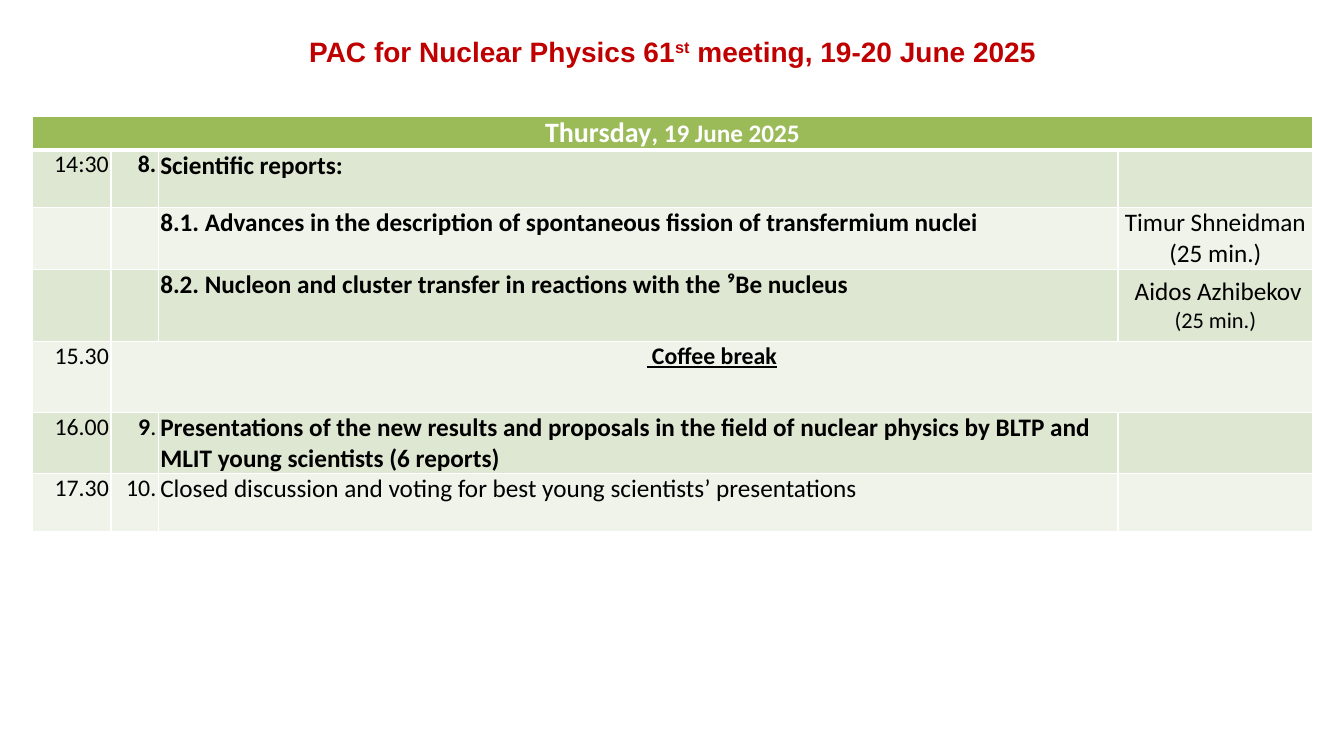
"""Build the agenda slide of the nuclear physics committee meeting."""
from dataclasses import dataclass

from lxml import etree
from pptx import Presentation
from pptx.dml.color import RGBColor
from pptx.enum.text import MSO_ANCHOR, PP_ALIGN
from pptx.oxml.ns import qn
from pptx.util import Inches, Pt

LEFT, CENTER, RIGHT = PP_ALIGN.LEFT, PP_ALIGN.CENTER, PP_ALIGN.RIGHT
TOP, MIDDLE = MSO_ANCHOR.TOP, MSO_ANCHOR.MIDDLE


@dataclass(frozen=True)
class Theme:
    red: str = "C00000"
    white: str = "FFFFFF"
    black: str = "000000"
    header: str = "9BBB59"
    bands: tuple = ("EFF3EA", "DEE7D1")
    title_font: str = "Arial"
    table_font: str = "Calibri"
    large: int = 20
    body: int = 18
    label: int = 17
    small: int = 16


THEME = Theme()
BOLD = {"bold": True}
LABEL = {"size": THEME.label}
BOLD_LABEL = LABEL | BOLD
UNDERLINED = BOLD_LABEL | {"underline": True}
BREAK = ("\n", {})

TITLE = [
    ("PAC for Nuclear Physics 61", {}),
    ("st", {"baseline": 30000}),
    (" meeting, 19-20 June 2025", {}),
]
HEADER = [("Thursday", {"size": THEME.large}), (", 19 June 2025", {})]
AGENDA = [
    [HEADER, [], [], []],
    [[("14:30", LABEL)], [("8.", BOLD_LABEL)], [("Scientific reports:", BOLD)], []],
    [[], [],
     [("8.1. Advances in the description of spontaneous fission of transfermium nuclei", BOLD)],
     [("Timur Shneidman", {}), BREAK, ("(25 min.)", {})]],
    [[], [],
     [("8.2. Nucleon and cluster transfer in reactions with the ⁹Be nucleus", BOLD)],
     [(" Aidos Azhibekov", {}), BREAK, ("(25 min.)", {"size": THEME.small})]],
    [[("15.30", LABEL)], [(" Coffee break", UNDERLINED)], [], []],
    [[("16.00", LABEL)], [("9", BOLD_LABEL), (".", LABEL)],
     [("Presentations of the new results and proposals in the field of nuclear physics "
       "by BLTP and MLIT young scientists (6 reports)", BOLD)], []],
    [[("17.30", LABEL)], [("10.", LABEL)],
     [("Closed discussion and voting for best young scientists’ presentations", {})], []],
]
MERGES = {(0, 0): (0, 3), (4, 1): (4, 3)}
COLUMN_WIDTHS = (0.78, 0.47, 9.52, 1.93)
ROW_HEIGHTS = (0.34, 0.57, 0.6, 0.72, 0.7, 0.6, 0.57)
COLUMN_ALIGNMENTS = (RIGHT, RIGHT, LEFT, CENTER)
FRAME_LEFT, FRAME_WIDTH = 0.32, sum(COLUMN_WIDTHS)


def write_runs(para, runs, base):
    """Write formatted runs and line breaks into a paragraph."""
    for text, changes in runs:
        if text == "\n":
            para.add_line_break()
            continue
        span = para.add_run()
        span.text = text
        formats = base | changes
        span.font.size = Pt(formats.pop("size"))
        span.font.color.rgb = RGBColor.from_string(formats.pop("color"))
        baseline = formats.pop("baseline", None)
        if baseline:
            span.font._element.set("baseline", str(baseline))
        for name, value in formats.items():
            setattr(span.font, name, value)


def add_borders(cell, bottom_width):
    """Draw white rules on the four sides of a cell."""
    properties = cell._tc.get_or_add_tcPr()
    for side, width in (("L", 1), ("R", 1), ("T", 1), ("B", bottom_width)):
        line = etree.SubElement(properties, qn(f"a:ln{side}"), w=str(Pt(width)))
        fill = etree.SubElement(line, qn("a:solidFill"))
        etree.SubElement(fill, qn("a:srgbClr"), val=THEME.white)


def add_title(page):
    """Place and write the slide title."""
    box = page.shapes.title
    box.left, box.top = Inches(FRAME_LEFT), Inches(0.29)
    box.width, box.height = Inches(FRAME_WIDTH), Inches(0.44)
    frame = box.text_frame
    frame.word_wrap, frame.vertical_anchor = True, TOP
    para = frame.paragraphs[0]
    para.alignment, para.line_spacing = CENTER, 1.0
    write_runs(para, TITLE, {"size": THEME.large, "name": THEME.title_font,
                             "color": THEME.red, "bold": True})


def format_cell(cell, row, column, runs):
    """Fill one agenda cell and write its text."""
    is_header = row == 0
    add_borders(cell, 3 if is_header else 1)
    fill = THEME.header if is_header else THEME.bands[row % 2]
    cell.fill.solid()
    cell.fill.fore_color.rgb = RGBColor.from_string(fill)
    if not runs:
        return
    is_speaker = column == 3
    side = Inches(0 if is_speaker else 0.02)
    margins = {"margin_left": side, "margin_right": side, "margin_top": 0, "margin_bottom": 0}
    for name, value in margins.items():
        setattr(cell, name, value)
    cell.vertical_anchor = MIDDLE if is_speaker else TOP
    para = cell.text_frame.paragraphs[0]
    para.alignment = CENTER if (row, column) in MERGES else COLUMN_ALIGNMENTS[column]
    write_runs(para, runs, {"size": THEME.body, "name": THEME.table_font, "bold": is_header,
                            "color": THEME.white if is_header else THEME.black})


def add_agenda(page):
    """Build the agenda table."""
    table = page.shapes.add_table(
        len(ROW_HEIGHTS), len(COLUMN_WIDTHS), Inches(FRAME_LEFT), Inches(1.15),
        Inches(FRAME_WIDTH), Inches(sum(ROW_HEIGHTS))).table
    for column, width in zip(table.columns, COLUMN_WIDTHS):
        column.width = Inches(width)
    for row, height in zip(table.rows, ROW_HEIGHTS):
        row.height = Inches(height)
    for start, end in MERGES.items():
        table.cell(*start).merge(table.cell(*end))
    for row, entries in enumerate(AGENDA):
        for column, runs in enumerate(entries):
            format_cell(table.cell(row, column), row, column, runs)


def main():
    """Create and save the deck."""
    deck = Presentation()
    deck.slide_width, deck.slide_height = Inches(13.33), Inches(7.5)
    page = deck.slides.add_slide(deck.slide_layouts[5])
    add_title(page)
    add_agenda(page)
    deck.save("out.pptx")


if __name__ == "__main__":
    main()
